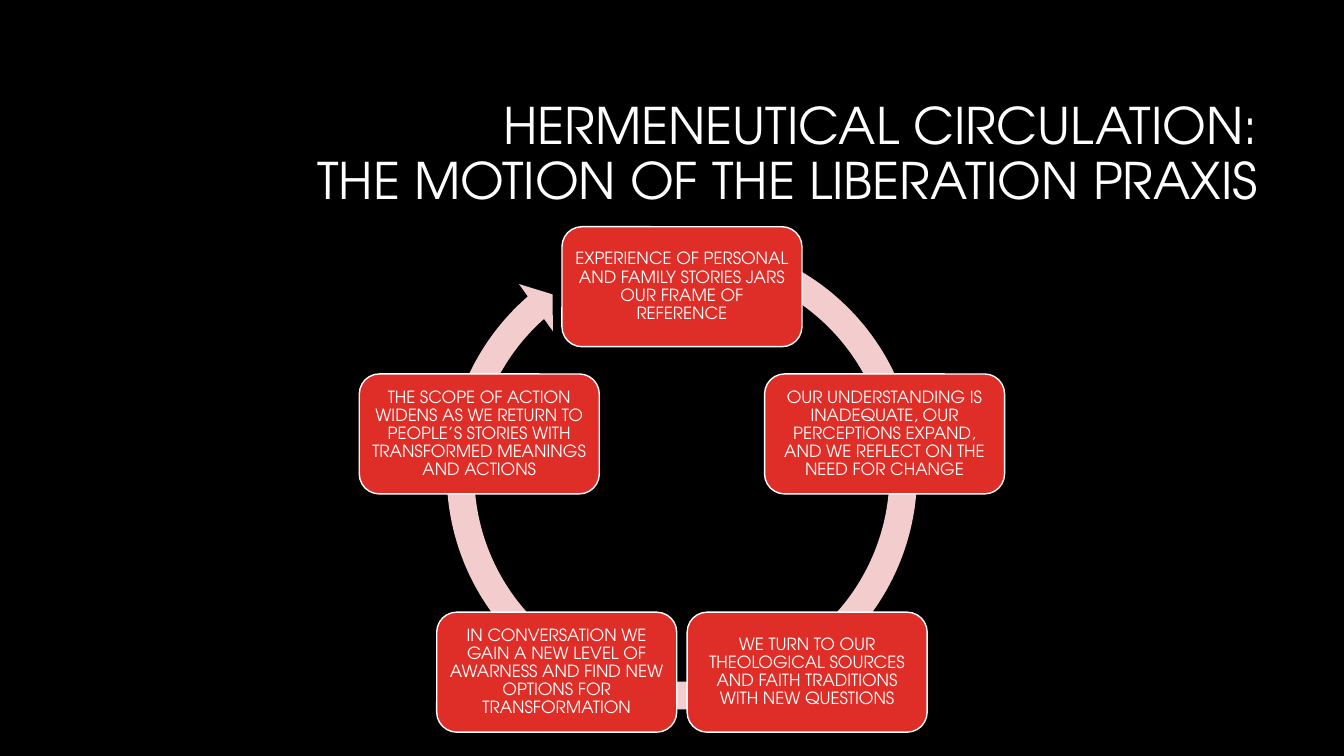
from math import cos, radians, sin

from pptx import Presentation
from pptx.dml.color import RGBColor
from pptx.enum.shapes import MSO_SHAPE
from pptx.enum.text import MSO_ANCHOR, PP_ALIGN
from pptx.util import Pt

TITLE = "HERMENEUTICAL CIRCULATION:\vTHE MOTION OF THE LIBERATION PRAXIS"
STEPS = [
    "EXPERIENCE OF PERSONAL AND FAMILY STORIES JARS OUR FRAME OF REFERENCE",
    "OUR UNDERSTANDING IS INADEQUATE, OUR PERCEPTIONS EXPAND, AND WE REFLECT ON THE NEED FOR CHANGE",
    "WE TURN TO OUR THEOLOGICAL SOURCES AND FAITH TRADITIONS WITH NEW QUESTIONS",
    "IN CONVERSATION WE GAIN A NEW LEVEL OF AWARNESS AND FIND NEW OPTIONS FOR TRANSFORMATION",
    "THE SCOPE OF ACTION WIDENS AS WE RETURN TO PEOPLE’S STORIES WITH TRANSFORMED MEANINGS AND ACTIONS",
]
COLORS = {"back": "000000", "text": "FFFFFF", "box": "DF2E28", "ring": "F3CDCD"}
FONT = "TeX Gyre Adventor"
CENTER_X, CENTER_Y, RADIUS = 487.1, 357, 152.2
BOX_W, BOX_H = 171.4, 85.7
RING_LEFT, RING_TOP, RING_SIZE = 308.2, 159.8, 357.8
RING_ADJUST = [0.055, 3.307, 137.253, 174.168, 0.058]


def color(name):
    return RGBColor.from_string(COLORS[name])


def write(sp, text, size, align, inset_x=7.2, inset_y=3.6):
    tf = sp.text_frame
    tf.word_wrap = True
    tf.vertical_anchor = MSO_ANCHOR.MIDDLE
    tf.margin_left = tf.margin_right = Pt(inset_x)
    tf.margin_top = tf.margin_bottom = Pt(inset_y)
    p = tf.paragraphs[0]
    p.text = text
    p.alignment = align
    p.line_spacing = 0.9
    for r in p.runs:
        r.font.name = FONT
        r.font.size = Pt(size)
        r.font.color.rgb = color("text")


def add_filled(s, kind, left, top, width, height, fill):
    sp = s.shapes.add_shape(kind, Pt(left), Pt(top), Pt(width), Pt(height))
    sp.shadow.inherit = False
    sp.fill.solid()
    sp.fill.fore_color.rgb = color(fill)
    return sp


def main():
    prs = Presentation()
    prs.slide_width, prs.slide_height = Pt(960), Pt(540)
    s = prs.slides.add_slide(prs.slide_layouts[6])
    s.background.fill.solid()
    s.background.fill.fore_color.rgb = color("back")

    title = s.shapes.add_textbox(Pt(174.2), Pt(60.5), Pt(731.5), Pt(101.5))
    write(title, TITLE, 36, PP_ALIGN.RIGHT)

    ring = add_filled(s, MSO_SHAPE.CIRCULAR_ARROW, RING_LEFT, RING_TOP,
                      RING_SIZE, RING_SIZE, "ring")
    ring.line.fill.background()
    for i, value in enumerate(RING_ADJUST):
        ring.adjustments[i] = value

    for i, text in enumerate(STEPS):
        angle = radians(360 / len(STEPS) * i)
        left = CENTER_X + RADIUS * sin(angle) - BOX_W / 2
        top = CENTER_Y - RADIUS * cos(angle) - BOX_H / 2
        box = add_filled(s, MSO_SHAPE.ROUNDED_RECTANGLE, left, top, BOX_W, BOX_H, "box")
        box.line.color.rgb = color("text")
        box.line.width = Pt(1)
        write(box, text, 12, PP_ALIGN.CENTER, 4, 4)

    prs.save("out.pptx")


if __name__ == "__main__":
    main()
